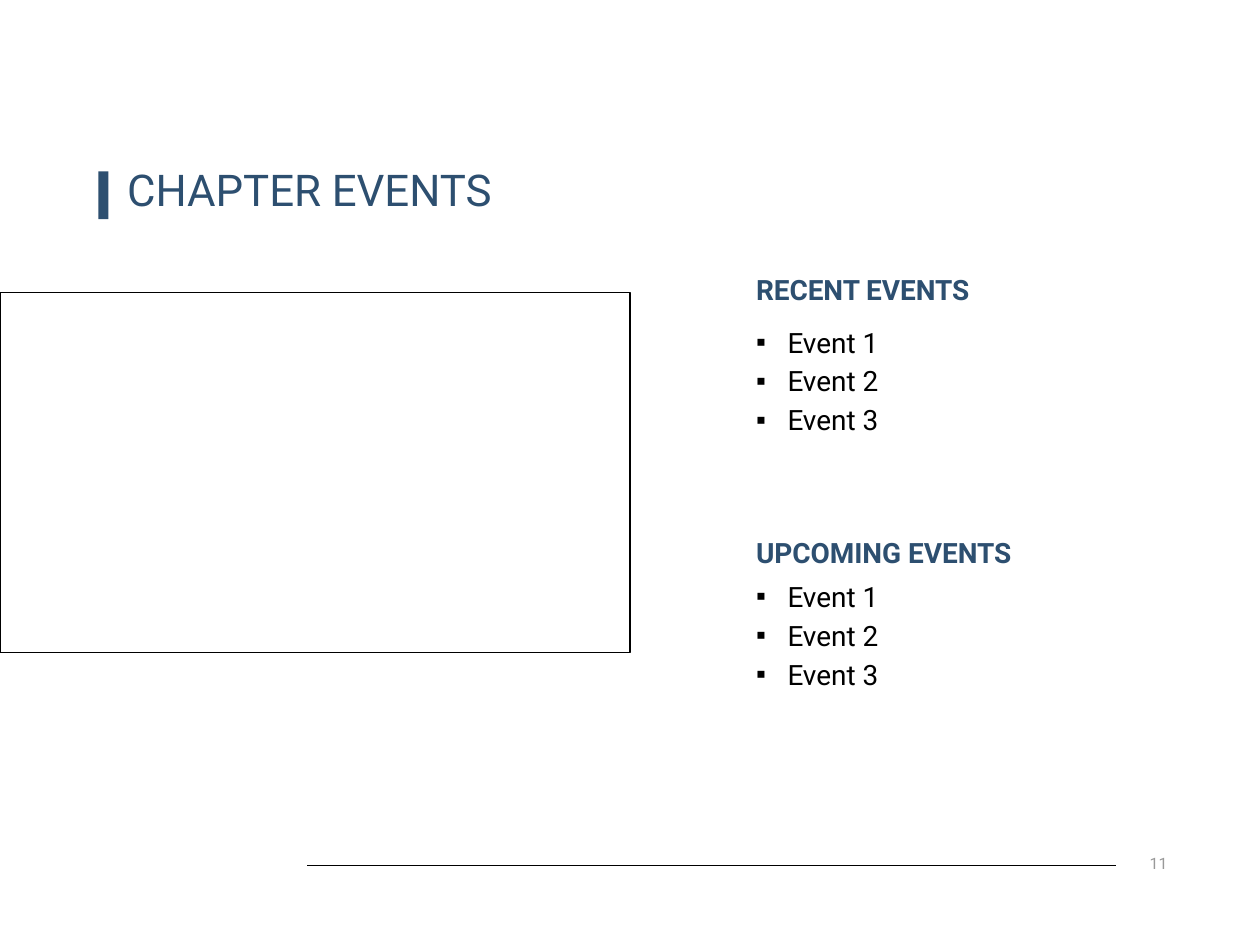
from pptx import Presentation
from pptx.dml.color import RGBColor
from pptx.enum.shapes import MSO_CONNECTOR as CONN, MSO_SHAPE as SHAPE
from pptx.enum.text import MSO_ANCHOR as ANCHOR, MSO_AUTO_SIZE as AUTO, PP_ALIGN as ALIGN
from pptx.oxml.ns import qn
from pptx.util import Inches, Pt
from lxml import etree

NAVY, BLACK, GRAY = "2D4F70", "000000", "999999"
COMPARISON = 4  # layout with a title, two headings and two lists


def rgb(value):
    return RGBColor.from_string(value)


class SlideBuilder:
    font = "Roboto"

    def __init__(self, prs):
        self.s = prs.slides.add_slide(prs.slide_layouts[COMPARISON])

    def set_text(self, sp, box, lines, size, color, bold=False, bullet=None,
                 align=ALIGN.LEFT, anchor=ANCHOR.TOP, inset=(0.05, 0.02)):
        sp.left, sp.top, sp.width, sp.height = map(Inches, box)
        tf = sp.text_frame
        x, y = map(Inches, inset)
        frame = {"word_wrap": True, "auto_size": AUTO.NONE, "vertical_anchor": anchor,
                 "margin_left": x, "margin_right": x, "margin_top": y, "margin_bottom": y}
        for name, value in frame.items():
            setattr(tf, name, value)
        tf.text = "\n".join(lines)
        for p in tf.paragraphs:
            p.alignment, p.space_before = align, Pt(0)
            if bullet:
                p.space_after = Pt(3)
            self.mark(p, bullet)
            for r in p.runs:
                font = {"name": self.font, "size": Pt(size), "bold": bold}
                for name, value in font.items():
                    setattr(r.font, name, value)
                r.font.color.rgb = rgb(color)

    def mark(self, p, bullet):
        pPr = p._p.get_or_add_pPr()
        indent = Inches(0.25) if bullet else 0
        pPr.set("marL", str(indent))
        pPr.set("indent", str(-indent))
        if bullet:
            etree.SubElement(pPr, qn("a:buChar")).set("char", bullet)
        else:
            etree.SubElement(pPr, qn("a:buNone"))

    def placeholder(self, idx, box, lines, size, color, **style):
        sp = next(ph for ph in self.s.placeholders if ph.placeholder_format.idx == idx)
        self.set_text(sp, box, lines, size, color, **style)

    def textbox(self, box, lines, size, color, **style):
        sp = self.s.shapes.add_textbox(*map(Inches, box))
        self.set_text(sp, box, lines, size, color, **style)

    def rect(self, box, fill=None, line=None):
        sp = self.s.shapes.add_shape(SHAPE.RECTANGLE, *map(Inches, box))
        sp.shadow.inherit = False
        for part, color in ((sp.fill, fill), (sp.line.fill, line)):
            if color:
                part.solid()
                part.fore_color.rgb = rgb(color)
            else:
                part.background()
        if line:
            sp.line.width = Pt(0)

    def line(self, start, end, color, width):
        cx = self.s.shapes.add_connector(CONN.STRAIGHT, *map(Inches, start + end))
        cx.line.color.rgb = rgb(color)
        cx.line.width = Pt(width)
        etree.SubElement(cx._element.spPr, qn("a:effectLst"))


def main():
    prs = Presentation()
    prs.slide_width, prs.slide_height = Inches(10), Inches(7.5)
    b = SlideBuilder(prs)

    # Footer rule and page number
    b.line((2.44, 6.87), (8.86, 6.87), BLACK, 0.25)
    b.textbox((8.89, 6.75, 0.61, 0.2), ["11"], 9, GRAY, align=ALIGN.CENTER,
              anchor=ANCHOR.MIDDLE, inset=(0.13, 0.07))

    # Title with accent bar
    b.placeholder(0, (0.96, 1.27, 8.36, 0.47), ["CHAPTER EVENTS"], 25, NAVY)
    b.rect((0.78, 1.36, 0.08, 0.38), fill=NAVY)

    # Empty frame on the left
    b.rect((0, 2.32, 5, 2.86), line=BLACK)

    # Event sections: heading placeholder, then its list
    events = [f"Event {n}" for n in (1, 2, 3)]
    sections = [(1, "RECENT EVENTS", 2.14, 2.56), (3, "UPCOMING EVENTS", 4.23, 4.58)]
    for idx, heading, heading_top, list_top in sections:
        b.placeholder(idx, (5.95, heading_top, 2.68, 0.69), [heading], 16, NAVY, bold=True)
        b.placeholder(idx + 1, (5.95, list_top, 3.45, 0.94), events, 16, BLACK, bullet="▪")

    prs.save("out.pptx")


if __name__ == "__main__":
    main()
